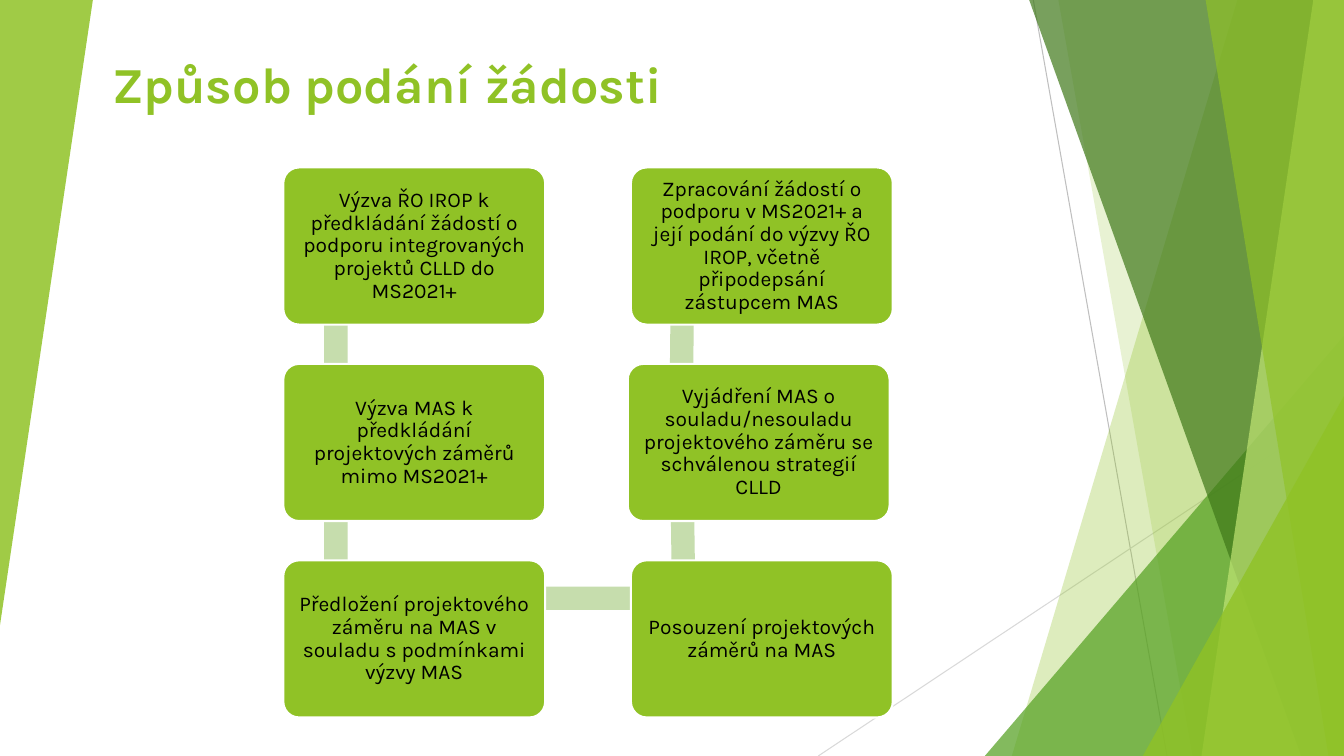
"""Build the slide on how an application is submitted, with a six-step flow."""
from dataclasses import dataclass
from typing import Any

from lxml import etree
from pptx import Presentation
from pptx import util as u
from pptx.dml.color import RGBColor
from pptx.enum import shapes, text
from pptx.oxml import ns

WIDTH, HEIGHT = 33.87, 19.05
TOP = -0.02
GREEN, PALE, BLACK, WHITE = "90C226", "C6DDAD", "000000", "FFFFFF"
FONT = "Karla"
BOX_WIDTH, BOX_HEIGHT = 6.6, 3.96
FIRST_ROW, ROW_STEP = 4.22, 4.95
BAR_THICKNESS, BAR_LENGTH = 0.59, 4.93


@dataclass
class Ray:
    start: tuple[float, float]
    end: tuple[float, float]
    colour: str


@dataclass
class Shard:
    top_x: float
    bottom_x: float
    colour: str
    opacity: int


@dataclass
class Wedge:
    left: float
    top: float
    width: float
    height: float
    colour: str
    opacity: int
    rotation: float = 0


@dataclass
class Bar:
    left: float
    top: float
    width: float
    height: float
    rotation: float = 0


@dataclass
class Step:
    left: float
    row: int
    wording: str


RAYS = [
    Ray((26.04, 0), (29.41, HEIGHT), "BFBFBF"),
    Ray((WIDTH, 10.24), (20.62, HEIGHT), "D9D9D9"),
]
FACETS = [
    Shard(31.19, 25.5, GREEN, 30),
    Shard(26.67, 30.05, GREEN, 20),
    Wedge(24.82, 8.46, 9.05, 10.59, "54A021", 72),
    Shard(25.93, 32.79, "3F7819", 70),
    Shard(33.1, 30.28, "C0E474", 70),
    Shard(30.38, 33.48, GREEN, 65),
    Wedge(28.8, 9.98, 5.07, 9.07, GREEN, 80),
    Wedge(0, 0, 2.34, 15.75, GREEN, 85, 180),
]
BARS = [
    Bar(left, 5.19 + gap * ROW_STEP, BAR_THICKNESS, BAR_LENGTH, tilt)
    for left, tilts in ((8.17, (0, 0)), (16.9, (0.6, -0.8)))
    for gap, tilt in enumerate(tilts)
] + [Bar(8.48, 14.78, 8.74, BAR_THICKNESS)]
STEPS = [
    Step(7.14, 0, "Výzva ŘO IROP k předkládání žádostí o podporu integrovaných projektů CLLD do MS2021+"),
    Step(7.14, 1, "Výzva MAS k předkládání projektových záměrů mimo MS2021+"),
    Step(7.14, 2, "Předložení projektového záměru na MAS v souladu s podmínkami výzvy MAS"),
    Step(15.9, 2, "Posouzení projektových záměrů na MAS"),
    Step(15.82, 1, "Vyjádření MAS o souladu/nesouladu projektového záměru se schválenou strategií CLLD"),
    Step(15.9, 0, "Zpracování žádostí o podporu v MS2021+ a její podání do výzvy ŘO IROP, "
                  "včetně připodepsání zástupcem MAS"),
]
BOX_FRAME = dict(word_wrap=True, vertical_anchor=text.MSO_ANCHOR.MIDDLE,
                 margin_left=u.Cm(0.26), margin_right=u.Cm(0.26),
                 margin_top=u.Cm(0.26), margin_bottom=u.Cm(0.26))
BOX_PARAGRAPH = dict(alignment=text.PP_ALIGN.CENTER, line_spacing=0.9)
BOX_FONT = dict(name=FONT, size=u.Pt(15), bold=False)
TITLE_PLACE = dict(left=u.Cm(2.46), top=u.Cm(0.36), width=u.Cm(14.48), height=u.Cm(2.64))
TITLE_FRAME = dict(auto_size=text.MSO_AUTO_SIZE.NONE, word_wrap=True,
                   vertical_anchor=text.MSO_ANCHOR.BOTTOM)
TITLE_PARAGRAPH = dict(alignment=text.PP_ALIGN.RIGHT)
TITLE_FONT = dict(name=FONT, size=u.Pt(36), bold=True)


def apply(target: Any, values: dict[str, Any]) -> None:
    """Set each named attribute of the target."""
    for name, value in values.items():
        setattr(target, name, value)


def paint(fill: Any, colour: str, opacity: int = 100) -> None:
    """Fill with a hex colour at the given opacity in percent."""
    fill.solid()
    fill.fore_color.rgb = RGBColor.from_string(colour)
    if opacity < 100:
        tint = fill._xPr.find(".//" + ns.qn("a:srgbClr"))
        etree.SubElement(tint, ns.qn("a:alpha"), val=str(opacity * 1000))


def write(frame: Any, wording: str, colour: str, frame_format: dict[str, Any],
          paragraph_format: dict[str, Any], font_format: dict[str, Any]) -> None:
    """Put formatted wording into a text frame."""
    frame.text = wording
    paragraph = frame.paragraphs[0]
    font = paragraph.runs[0].font
    apply(frame, frame_format)
    apply(paragraph, paragraph_format)
    apply(font, font_format)
    paint(font.fill, colour)


def add_preset(slide: Any, kind: Any, left: float, top: float, width: float, height: float,
               colour: str, opacity: int = 100, rotation: float = 0) -> Any:
    """Add a flat preset shape without an outline."""
    preset = slide.shapes.add_shape(kind, u.Cm(left), u.Cm(top), u.Cm(width), u.Cm(height))
    preset.shadow.inherit = False
    preset.rotation = rotation
    preset.line.fill.background()
    paint(preset.fill, colour, opacity)
    return preset


def draw_ray(slide: Any, ray: Ray) -> None:
    """Draw a thin background line."""
    ends = [u.Cm(length) for length in ray.start + ray.end]
    connector = slide.shapes.add_connector(shapes.MSO_CONNECTOR.STRAIGHT, *ends)
    paint(connector.line.fill, ray.colour)
    connector.line.width = u.Pt(0.75)
    etree.SubElement(connector._element.spPr, ns.qn("a:effectLst"))


def draw_shard(slide: Any, shard: Shard) -> None:
    """Draw a translucent facet reaching the right edge of the slide."""
    corners = [(u.Cm(x), u.Cm(y)) for x, y in (
        (shard.top_x, TOP), (WIDTH, TOP), (WIDTH, HEIGHT), (shard.bottom_x, HEIGHT))]
    builder = slide.shapes.build_freeform(*corners[0])
    builder.add_line_segments(corners[1:], close=True)
    facet = builder.convert_to_shape()
    facet.shadow.inherit = False
    facet.line.fill.background()
    paint(facet.fill, shard.colour, shard.opacity)


def draw_wedge(slide: Any, wedge: Wedge) -> None:
    """Draw a translucent right-angled triangle."""
    facet = add_preset(slide, shapes.MSO_SHAPE.ISOSCELES_TRIANGLE, wedge.left, wedge.top,
                       wedge.width, wedge.height, wedge.colour, wedge.opacity, wedge.rotation)
    facet.adjustments[0] = 1


def draw_bar(slide: Any, bar: Bar) -> None:
    """Draw a pale link between steps."""
    add_preset(slide, shapes.MSO_SHAPE.RECTANGLE, bar.left, bar.top, bar.width, bar.height,
               PALE, rotation=bar.rotation)


def draw_step(slide: Any, step: Step) -> None:
    """Draw one rounded step with its wording."""
    box = add_preset(slide, shapes.MSO_SHAPE.ROUNDED_RECTANGLE, step.left,
                     FIRST_ROW + step.row * ROW_STEP, BOX_WIDTH, BOX_HEIGHT, GREEN)
    box.adjustments[0] = 0.1
    paint(box.line.fill, WHITE)
    box.line.width = u.Pt(1.5)
    write(box.text_frame, step.wording, BLACK, BOX_FRAME, BOX_PARAGRAPH, BOX_FONT)


def main() -> None:
    """Assemble and save the slide."""
    deck = Presentation()
    apply(deck, dict(slide_width=u.Cm(WIDTH), slide_height=u.Cm(HEIGHT)))
    slide = deck.slides.add_slide(deck.slide_layouts.get_by_name("Title Only"))
    painters = {Ray: draw_ray, Shard: draw_shard, Wedge: draw_wedge, Bar: draw_bar, Step: draw_step}
    for part in RAYS + FACETS + BARS + STEPS:
        painters[type(part)](slide, part)
    heading = slide.shapes.title
    apply(heading, TITLE_PLACE)
    write(heading.text_frame, "Způsob podání žádosti", GREEN,
          TITLE_FRAME, TITLE_PARAGRAPH, TITLE_FONT)
    deck.save("out.pptx")


if __name__ == "__main__":
    main()
